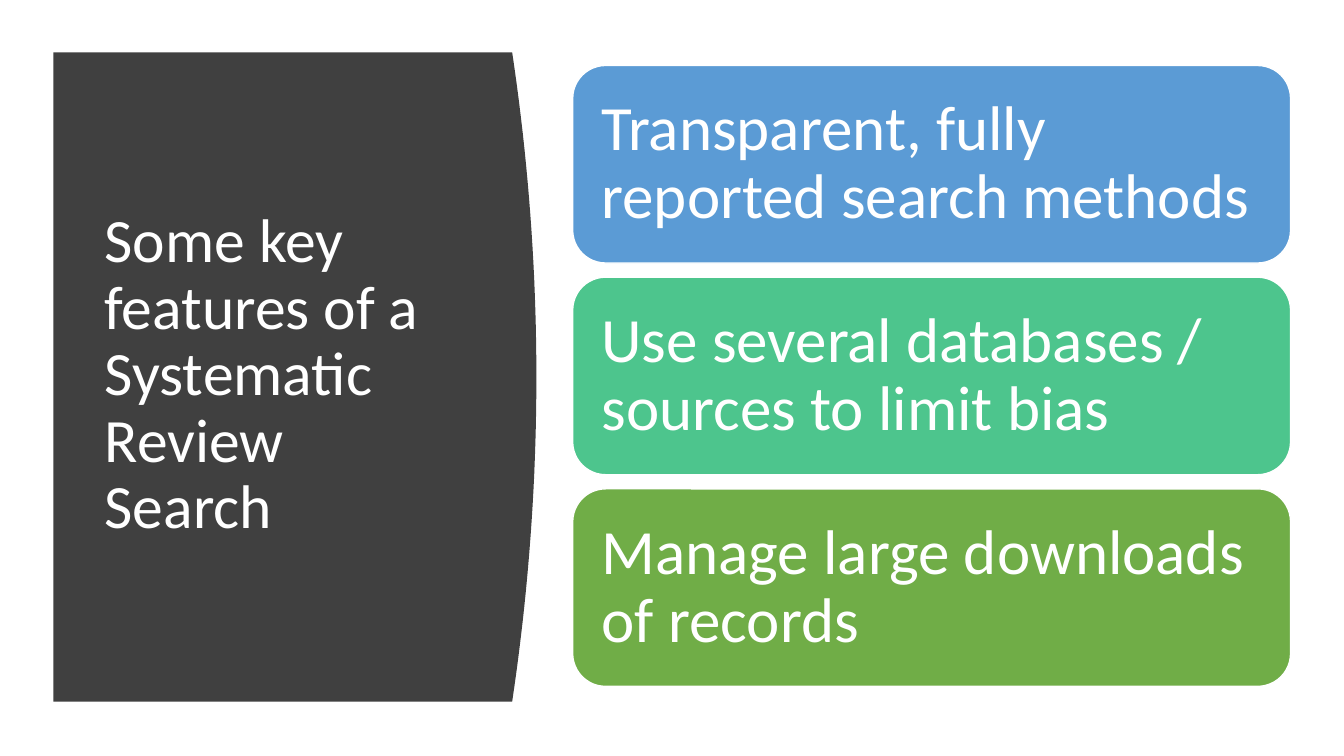
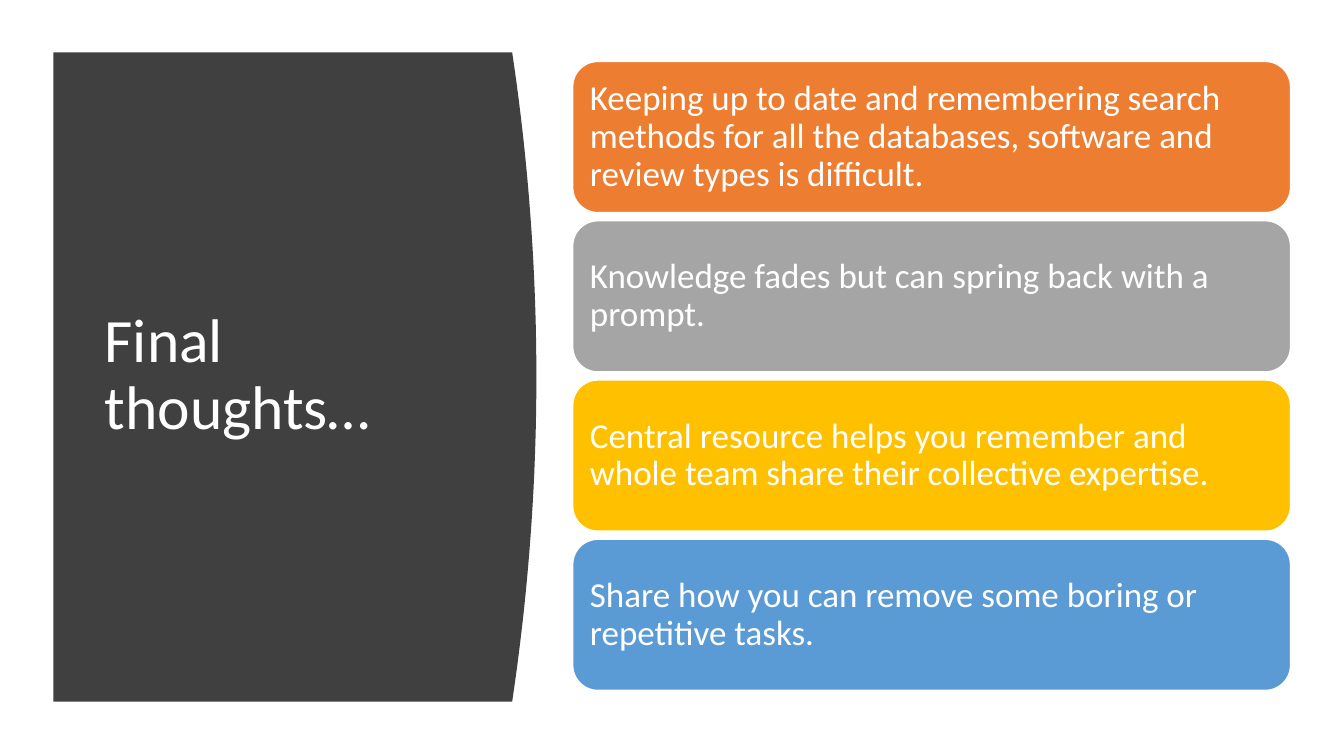
"""Build two slides with a curved title panel and a stack of cards."""
from pptx import Presentation, util as u
from pptx.dml.color import RGBColor
from pptx.enum import shapes, text

COLORS = {
    "white": "FFFFFF", "panel": "404040", "blue": "5B9BD5", "mint": "4DC58D",
    "green": "70AD47", "orange": "ED7D31", "gray": "A5A5A5", "gold": "FFC000",
}
FONT = "Calibri"
PANEL_LEFT, PANEL_TOP, PANEL_EDGE, PANEL_HEIGHT = 0.53, 0.52, 5.08, 6.44
BULGE, CURVE_STEPS = 0.24, 40
CARD_LEFT, CARD_WIDTH, STACK_CENTER = 5.68, 7.12, 3.73

SLIDES = [
    {
        "title": "Some key features of a Systematic Review Search",
        "height": 1.96, "gap": 0.14, "inset": 0.19, "size": 45,
        "cards": [
            ("blue", "Transparent, fully reported search methods"),
            ("mint", "Use several databases / sources to limit bias"),
            ("green", "Manage large downloads of records"),
        ],
    },
    {
        "title": "Final thoughts…",
        "height": 1.5, "gap": 0.08, "inset": 0.1, "size": 25,
        "cards": [
            ("orange", "Keeping up to date and remembering search methods for all "
                       "the databases, software and review types is difficult."),
            ("gray", "Knowledge fades but can spring back with a prompt."),
            ("gold", "Central resource helps you remember and whole team share "
                     "their collective expertise."),
            ("blue", "Share how you can remove some boring or repetitive tasks."),
        ],
    },
]


def rgb(name):
    return RGBColor.from_string(COLORS[name])


def write(shape, words, size, inset_x, inset_y):
    frame = shape.text_frame
    frame.word_wrap = True
    frame.vertical_anchor = text.MSO_ANCHOR.MIDDLE
    frame.margin_left = frame.margin_right = u.Inches(inset_x)
    frame.margin_top = frame.margin_bottom = u.Inches(inset_y)
    paragraph = frame.paragraphs[0]
    paragraph.alignment = text.PP_ALIGN.LEFT
    paragraph.line_spacing = 0.9
    run = paragraph.add_run()
    run.text = words
    run.font.name = FONT
    run.font.size = u.Pt(size)
    run.font.color.rgb = rgb("white")


curve = []
for step in range(CURVE_STEPS + 1):
    t = step / CURVE_STEPS
    x = PANEL_EDGE + BULGE * 4 * t * (1 - t)
    curve.append((u.Inches(x), u.Inches(PANEL_TOP + PANEL_HEIGHT * t)))
curve.append((u.Inches(PANEL_LEFT), u.Inches(PANEL_TOP + PANEL_HEIGHT)))

deck = Presentation()
deck.slide_width, deck.slide_height = u.Inches(13.33), u.Inches(7.5)

for content in SLIDES:
    slide = deck.slides.add_slide(deck.slide_layouts[6])

    outline = slide.shapes.build_freeform(u.Inches(PANEL_LEFT), u.Inches(PANEL_TOP))
    outline.add_line_segments(curve, close=True)
    panel = outline.convert_to_shape()
    panel.shadow.inherit = False
    panel.fill.solid()
    panel.fill.fore_color.rgb = rgb("panel")
    panel.line.fill.background()

    title = slide.shapes.add_textbox(
        u.Inches(0.94), u.Inches(1.11), u.Inches(3.74), u.Inches(5.24))
    write(title, content["title"], 44, 0.1, 0.05)

    height, pitch = content["height"], content["height"] + content["gap"]
    top = STACK_CENTER - (len(content["cards"]) * pitch - content["gap"]) / 2
    for row, (color, words) in enumerate(content["cards"]):
        card = slide.shapes.add_shape(
            shapes.MSO_SHAPE.ROUNDED_RECTANGLE, u.Inches(CARD_LEFT),
            u.Inches(top + row * pitch), u.Inches(CARD_WIDTH), u.Inches(height))
        card.shadow.inherit = False
        card.fill.solid()
        card.fill.fore_color.rgb = rgb(color)
        card.line.color.rgb = rgb("white")
        card.line.width = u.Pt(1)
        write(card, words, content["size"], content["inset"], content["inset"])

deck.save("out.pptx")
